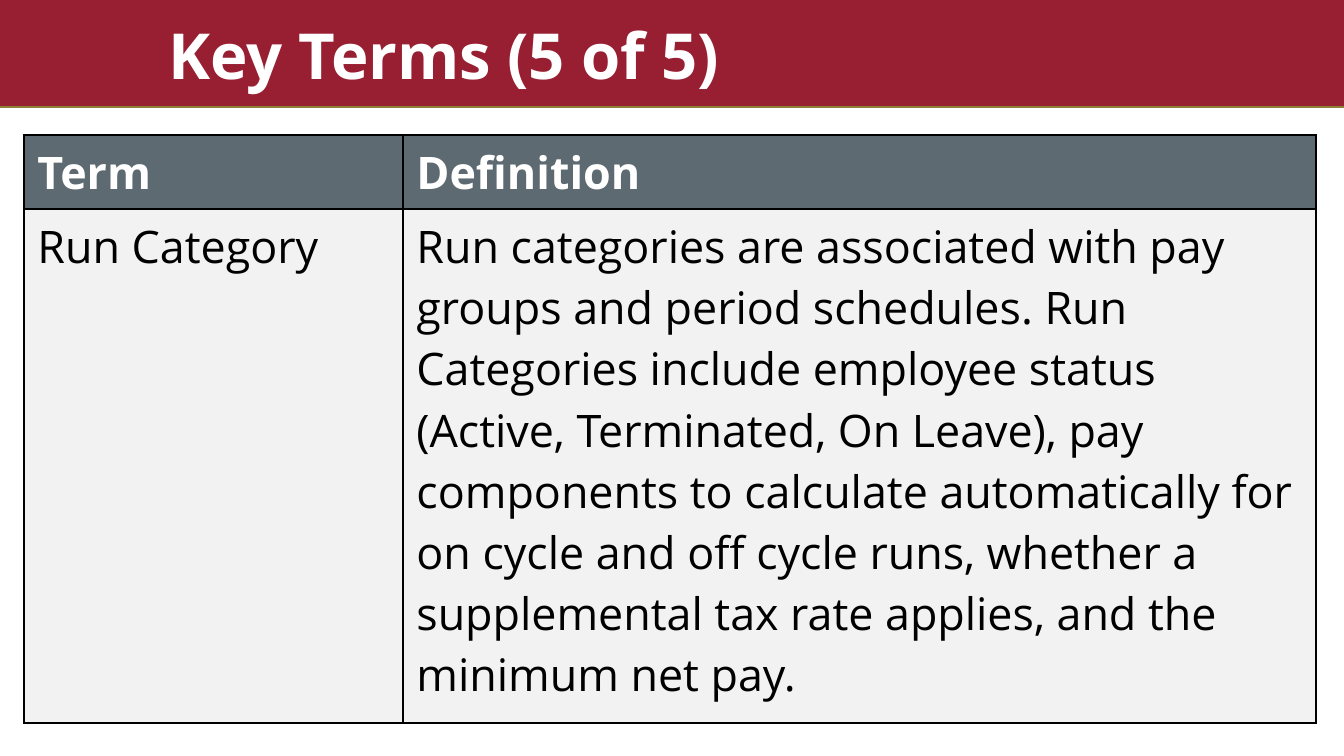
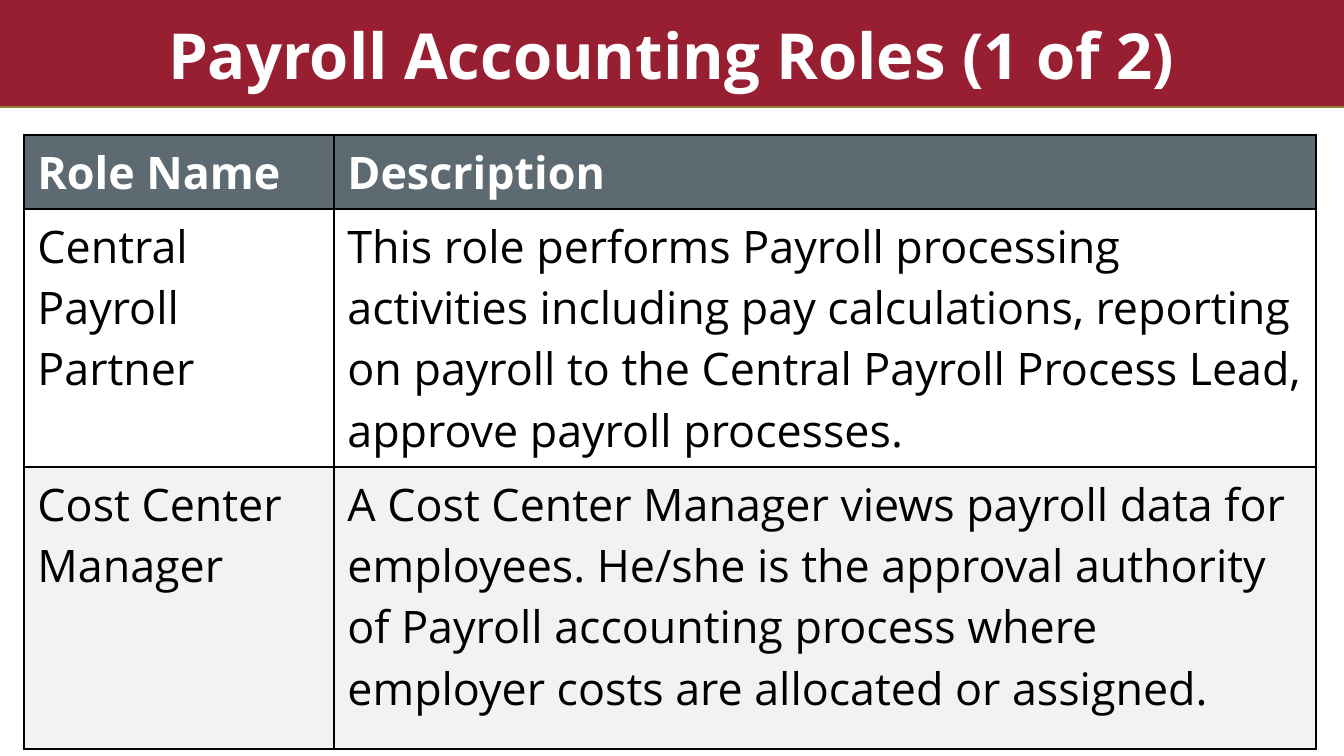
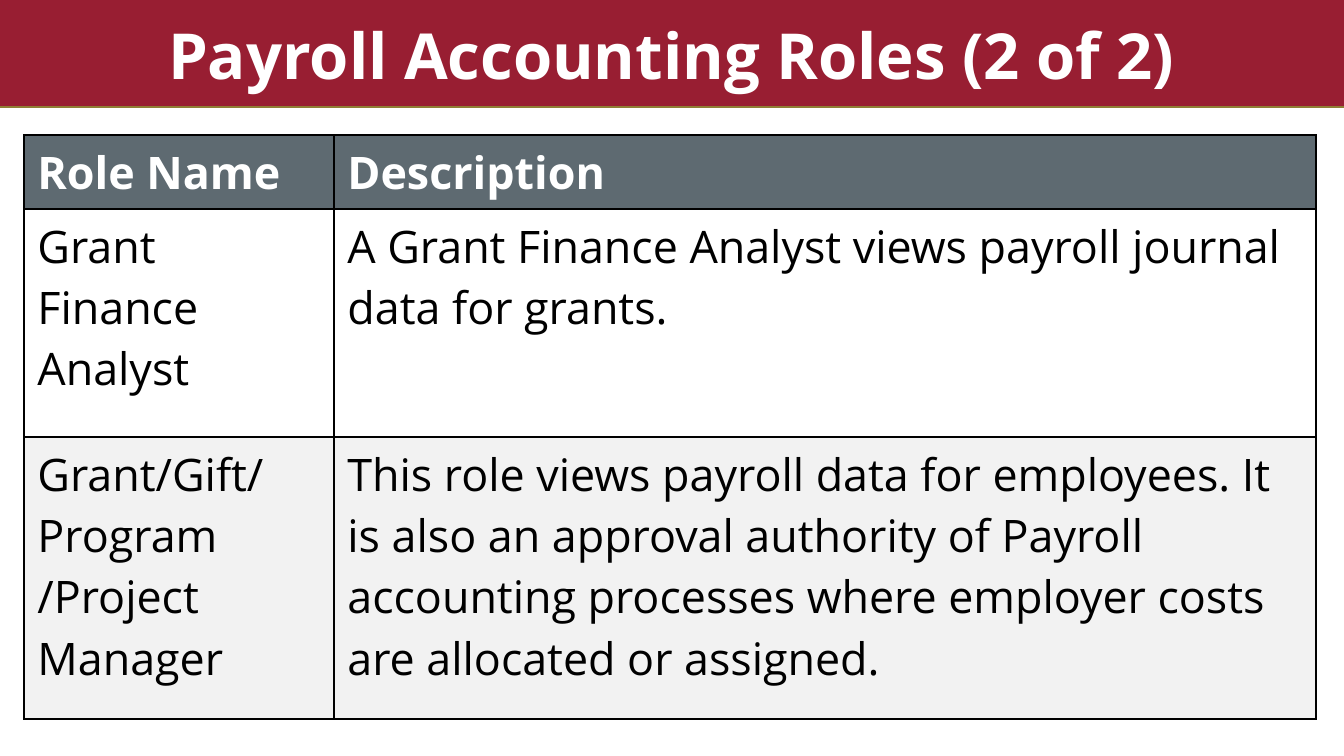
from lxml import etree
from pptx import Presentation
from pptx import util as u
from pptx.dml.color import RGBColor
from pptx.enum import shapes, text
from pptx.oxml.ns import qn

PX = 914400 / 134.4
FONT = "Open Sans"
CRIMSON, GOLD, SLATE = "981E32", "8F7E35", "5E6A71"
WHITE, GREY, BLACK = "FFFFFF", "F2F2F2", "000000"
SLIDE_W, SLIDE_H, BAND_H = 1344, 756, 107
HEADER_H = 74


def px(n):
    return u.Emu(round(n * PX))


def rgb(value):
    return RGBColor.from_string(value)


# title, column widths, body row heights, body fills, table rows
role_columns, role_fills = [310, 982], [WHITE, GREY]
role_header = ("Role Name", "Description")
pages = [
    ("Key Terms (5 of 5)", [379, 913], [514], [GREY], [
        ("Term", "Definition"),
        ("Run Category",
         "Run categories are associated with pay groups and period schedules. "
         "Run Categories include employee status (Active, Terminated, On Leave), "
         "pay components to calculate automatically for on cycle and off cycle "
         "runs, whether a supplemental tax rate applies, and the minimum net pay."),
    ]),
    ("Payroll Accounting Roles (1 of 2)", role_columns, [258, 282], role_fills, [
        role_header,
        ("Central Payroll Partner",
         "This role performs Payroll processing activities including pay "
         "calculations, reporting on payroll to the Central Payroll Process "
         "Lead, approve payroll processes."),
        ("Cost Center Manager",
         "A Cost Center Manager views payroll data for employees. He/she is the "
         "approval authority of Payroll accounting process where employer costs "
         "are allocated or assigned."),
    ]),
    ("Payroll Accounting Roles (2 of 2)", role_columns, [228, 282], role_fills, [
        role_header,
        ("Grant Finance Analyst",
         "A Grant Finance Analyst views payroll journal data for grants."),
        ("Grant/Gift/ Program /Project Manager",
         "This role views payroll data for employees. It is also an approval "
         "authority of Payroll accounting processes where employer costs are "
         "allocated or assigned."),
    ]),
]

prs = Presentation()
prs.slide_width, prs.slide_height = px(SLIDE_W), px(SLIDE_H)
layout = prs.slide_layouts[5]

for number, (title, col_widths, body_heights, body_fills, rows) in enumerate(pages):
    s = prs.slides.add_slide(layout)

    # Band and rule, moved once to the shared layout
    if number == 0:
        band = s.shapes.add_shape(shapes.MSO_SHAPE.RECTANGLE, 0, 0, px(SLIDE_W), px(BAND_H))
        band.shadow.inherit = False
        band.fill.solid()
        band.fill.fore_color.rgb = rgb(CRIMSON)
        band.line.fill.background()
        rule = s.shapes.add_connector(
            shapes.MSO_CONNECTOR.STRAIGHT, 0, px(BAND_H), px(SLIDE_W), px(BAND_H))
        rule.line.color.rgb = rgb(GOLD)
        rule.line.width = u.Pt(1)
        etree.SubElement(rule.element.spPr, qn("a:effectLst"))
        for i, sp in enumerate((band, rule)):
            layout.shapes.element.insert(2 + i, sp.element)

    # Title
    sp = s.shapes.title
    sp.left, sp.top, sp.width, sp.height = px(101), px(17), px(1218), px(83)
    tf = sp.text_frame
    tf.word_wrap = True
    tf.auto_size = text.MSO_AUTO_SIZE.SHAPE_TO_FIT_TEXT
    tf.vertical_anchor = text.MSO_ANCHOR.BOTTOM
    tf.margin_left = tf.margin_right = u.Inches(0.5)
    tf.margin_top = tf.margin_bottom = u.Inches(0.05)
    p = tf.paragraphs[0]
    p.alignment = text.PP_ALIGN.LEFT
    p.line_spacing = 0.9
    r = p.add_run()
    r.text = title
    r.font.name, r.font.size, r.font.bold = FONT, u.Pt(34), True
    r.font.color.rgb = rgb(WHITE)

    # Table
    row_heights = [HEADER_H] + body_heights
    table = s.shapes.add_table(
        len(rows), len(col_widths), px(24), px(135),
        px(sum(col_widths)), px(sum(row_heights))).table
    table.horz_banding = False
    for column, width in zip(table.columns, col_widths):
        column.width = px(width)
    for row, height in zip(table.rows, row_heights):
        row.height = px(height)

    for i, (values, fill) in enumerate(zip(rows, [SLATE] + body_fills)):
        header = i == 0
        for j, value in enumerate(values):
            cell = table.cell(i, j)
            cell.vertical_anchor = text.MSO_ANCHOR.MIDDLE if header else text.MSO_ANCHOR.TOP
            tcPr = cell._tc.get_or_add_tcPr()
            for side in ("lnL", "lnR", "lnT", "lnB"):
                ln = etree.SubElement(tcPr, qn("a:" + side), w=str(u.Pt(1)))
                solid = etree.SubElement(ln, qn("a:solidFill"))
                etree.SubElement(solid, qn("a:srgbClr"), val=BLACK)
            cell.fill.solid()
            cell.fill.fore_color.rgb = rgb(fill)
            r = cell.text_frame.paragraphs[0].add_run()
            r.text = value
            r.font.name, r.font.size, r.font.bold = FONT, u.Pt(24), header
            r.font.color.rgb = rgb(WHITE if header else BLACK)

prs.save("out.pptx")
